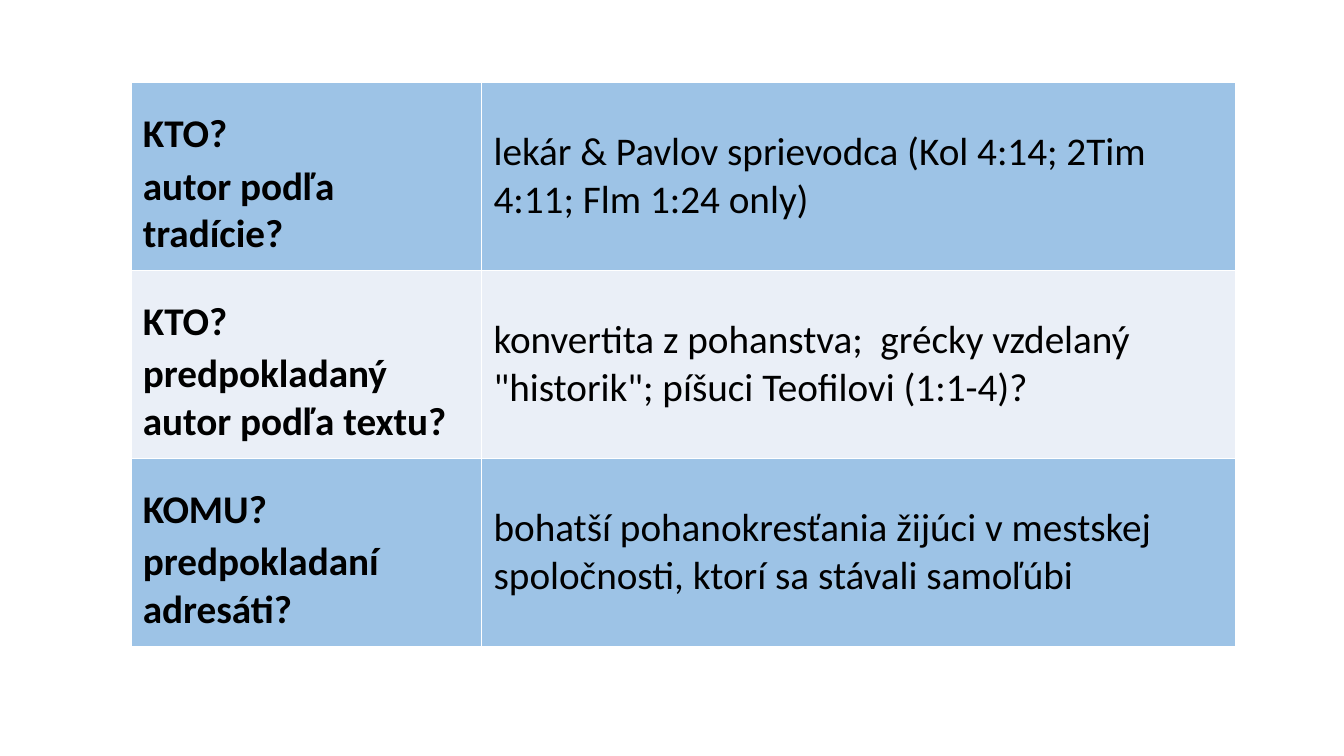
from lxml import etree
from pptx import Presentation
from pptx.dml.color import RGBColor
from pptx.enum.text import MSO_ANCHOR
from pptx.oxml.ns import qn
from pptx.util import Cm, Pt

MIDDLE = MSO_ANCHOR.MIDDLE
BLACK = RGBColor(0x00, 0x00, 0x00)
WHITE = RGBColor(0xFF, 0xFF, 0xFF)
BLUE = RGBColor(0x9D, 0xC3, 0xE6)
PALE = RGBColor(0xEA, 0xEF, 0xF7)
FONT = "Calibri"
INSET = Cm(0.3)
WIDTHS = [Cm(8.84), Cm(19)]
HEIGHT = Cm(4.72)
ROWS = [
    ("KTO? ", "autor podľa tradície?",
     "lekár & Pavlov sprievodca (Kol 4:14; 2Tim 4:11; Flm 1:24 only)"),
    ("KTO? ", "predpokladaný autor podľa textu?",
     "konvertita z pohanstva;  grécky vzdelaný \"historik\"; píšuci Teofilovi (1:1-4)?"),
    ("KOMU?", "predpokladaní adresáti?",
     "bohatší pohanokresťania žijúci v mestskej spoločnosti, ktorí sa stávali samoľúbi"),
]


def add_text(para, text, size=28, bold=False, color=BLACK):
    run = para.add_run()
    run.text = text
    font = run.font
    font.name = FONT
    font.size = Pt(size)
    font.bold = bold
    font.color.rgb = color


def add_border(cell, color=WHITE, width=Pt(1)):
    props = cell._tc.get_or_add_tcPr()
    for place, side in enumerate(("lnL", "lnR", "lnT", "lnB")):
        line = etree.Element(qn(f"a:{side}"), w=str(width))
        fill = etree.SubElement(line, qn("a:solidFill"))
        etree.SubElement(fill, qn("a:srgbClr"), val=str(color))
        props.insert(place, line)


def style_cell(cell, color):
    cell.fill.solid()
    cell.fill.fore_color.rgb = color
    cell.vertical_anchor = MIDDLE
    cell.margin_left = cell.margin_right = INSET
    cell.margin_top = cell.margin_bottom = INSET
    add_border(cell)


def fill_label(cell, title, detail):
    para = cell.text_frame.paragraphs[0]
    add_text(para, title, bold=True)
    add_text(para, " ", size=40, bold=True)
    para.add_line_break()
    add_text(para, detail, bold=True)


def add_grid(slide):
    frame = slide.shapes.add_table(
        len(ROWS), len(WIDTHS), Cm(3.3), Cm(2.08), sum(WIDTHS), HEIGHT * len(ROWS))
    table = frame.table
    table.first_row = False
    table.horz_banding = False
    for column, width in zip(table.columns, WIDTHS):
        column.width = width
    for index, (title, detail, answer) in enumerate(ROWS):
        table.rows[index].height = HEIGHT
        label, reply = table.rows[index].cells
        for cell in (label, reply):
            style_cell(cell, PALE if index % 2 else BLUE)
        fill_label(label, title, detail)
        add_text(reply.text_frame.paragraphs[0], answer)


def main():
    deck = Presentation()
    deck.slide_width = Cm(33.87)
    deck.slide_height = Cm(19.05)
    slide = deck.slides.add_slide(deck.slide_layouts[6])
    add_grid(slide)
    deck.save("out.pptx")


if __name__ == "__main__":
    main()
